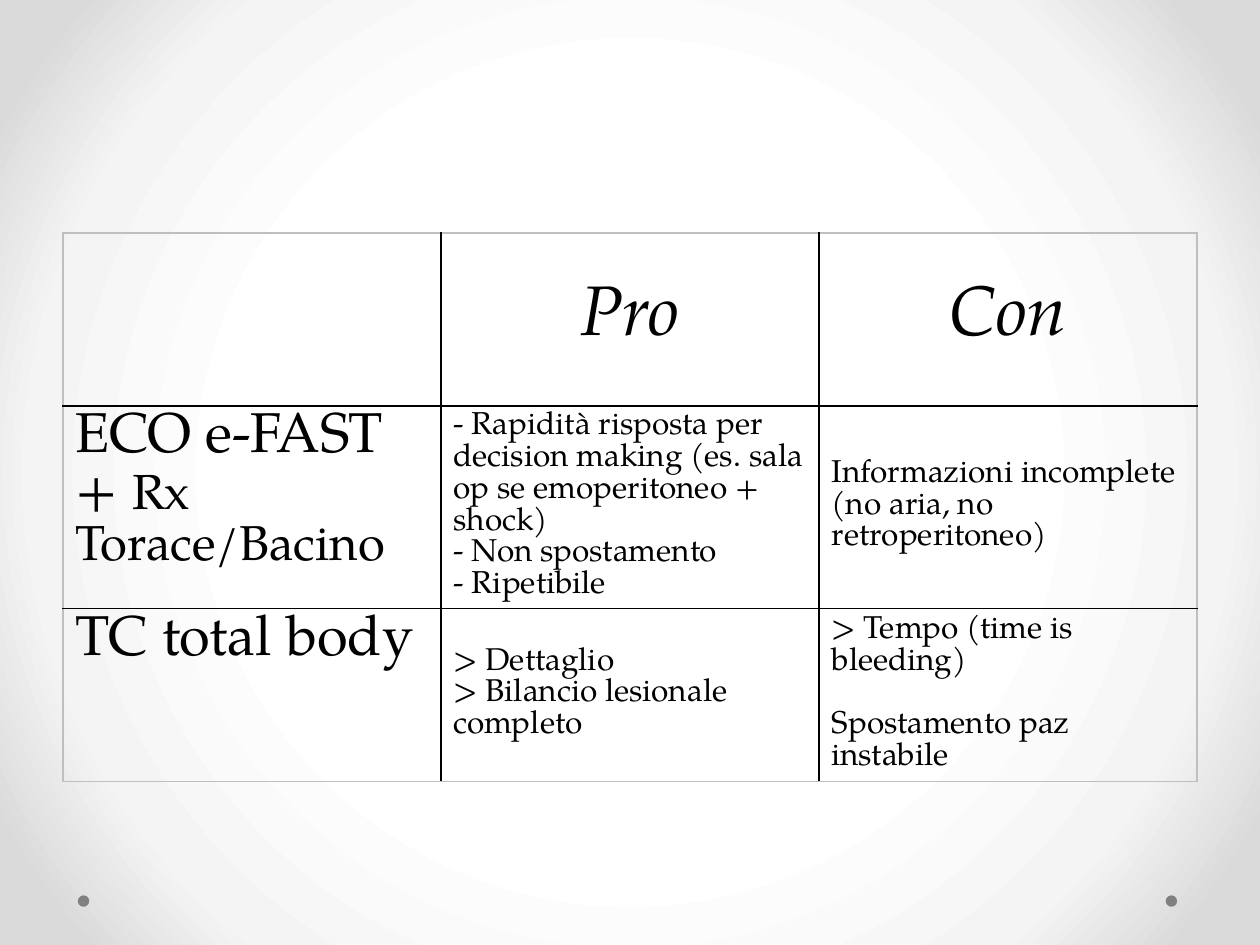
from pptx import Presentation
from pptx.dml.color import RGBColor
from pptx.enum.shapes import MSO_SHAPE
from pptx.enum.text import MSO_ANCHOR, PP_ALIGN
from pptx.oxml import parse_xml
from pptx.oxml.ns import nsdecls
from pptx.util import Cm, Pt

OVAL = MSO_SHAPE.OVAL
TOP, MIDDLE = MSO_ANCHOR.TOP, MSO_ANCHOR.MIDDLE
LEFT, CENTER = PP_ALIGN.LEFT, PP_ALIGN.CENTER
FONT = "TeX Gyre Pagella"
BLACK, GRAY, EDGE = "000000", "808080", "BFBFBF"
STOPS = [(50, "FFFFFF"), (76, "F4F4F4"), (92, "DADADA")]
COL_W, ROW_H = 7.62, 3.48

ROWS = [
    [None, ("Pro", "head"), ("Con", "head")],
    [
        ([("ECO e-FAST + ", 32), ("Rx Torace/Bacino", 28)], "label"),
        ("- Rapidità risposta per decision making (es. sala op se emoperitoneo + shock)\n"
         "- Non spostamento\n- Ripetibile", "body"),
        ("Informazioni incomplete (no aria, no retroperitoneo)", "body"),
    ],
    [
        ("TC total body", "label"),
        ("> Dettaglio\n> Bilancio lesionale completo", "body"),
        ("> Tempo (time is bleeding)\nSpostamento paz instabile", "spaced"),
    ],
]
STYLES = {
    "head": dict(size=40, italic=True, align=CENTER),
    "label": dict(size=32, anchor=TOP),
    "body": dict(size=18),
    "spaced": dict(size=18, gap=18),
}


def rgb(color):
    return RGBColor.from_string(color)


def set_background(s):
    s.background.fill.solid()
    solid = s.background.fill._xPr.solidFill
    stops = "".join(
        f'<a:gs pos="{pos * 1000}"><a:srgbClr val="{color}"/></a:gs>'
        for pos, color in STOPS
    )
    grad = parse_xml(
        f'<a:gradFill {nsdecls("a")} rotWithShape="1"><a:gsLst>{stops}</a:gsLst>'
        '<a:path path="circle"><a:fillToRect l="50000" t="50000" r="50000" b="50000"/>'
        "</a:path></a:gradFill>"
    )
    solid.getparent().replace(solid, grad)


def add_dot(s, left):
    sp = s.shapes.add_shape(OVAL, Cm(left), Cm(18.05), Cm(0.23), Cm(0.23))
    sp.shadow.inherit = False
    sp.fill.solid()
    sp.fill.fore_color.rgb = rgb(GRAY)
    sp.line.fill.background()


def write(cell, text, size=18, italic=False, align=LEFT, anchor=MIDDLE, gap=0):
    cell.vertical_anchor = anchor
    tf = cell.text_frame
    lines = [[(line, size)] for line in text.split("\n")] if isinstance(text, str) else [text]
    for i, runs in enumerate(lines):
        p = tf.add_paragraph() if i else tf.paragraphs[0]
        p.alignment = align
        if i and gap:
            p.space_before = Pt(gap)
        for words, points in runs:
            r = p.add_run()
            r.text = words
            r.font.name = FONT
            r.font.size = Pt(points)
            r.font.italic = italic
            r.font.bold = False
            r.font.color.rgb = rgb(BLACK)


def set_borders(cell, outer):
    tcPr = cell._tc.get_or_add_tcPr()
    for i, side in enumerate("LRTB"):
        color = EDGE if side in outer else BLACK
        tcPr.insert(i, parse_xml(
            f'<a:ln{side} {nsdecls("a")} w="12700"><a:solidFill>'
            f'<a:srgbClr val="{color}"/></a:solidFill></a:ln{side}>'
        ))


def add_grid(s, rows):
    n, m = len(rows), len(rows[0])
    table = s.shapes.add_table(
        n, m, Cm(1.27), Cm(4.7), Cm(COL_W * m), Cm(ROW_H * n)
    ).table
    table.first_row = False
    table.horz_banding = False
    for col in table.columns:
        col.width = Cm(COL_W)
    for i, row in enumerate(rows):
        table.rows[i].height = Cm(ROW_H)
        for j, content in enumerate(row):
            cell = table.cell(i, j)
            cell.fill.background()
            edges = {"L": j == 0, "R": j == m - 1, "T": i == 0, "B": i == n - 1}
            set_borders(cell, [side for side, on in edges.items() if on])
            if content:
                text, style = content
                write(cell, text, **STYLES[style])


def main():
    prs = Presentation()
    prs.slide_width, prs.slide_height = Cm(25.4), Cm(19.05)
    s = prs.slides.add_slide(prs.slide_layouts[6])
    set_background(s)
    for left in (23.5, 1.57):
        add_dot(s, left)
    add_grid(s, ROWS)
    prs.save("out.pptx")


if __name__ == "__main__":
    main()
